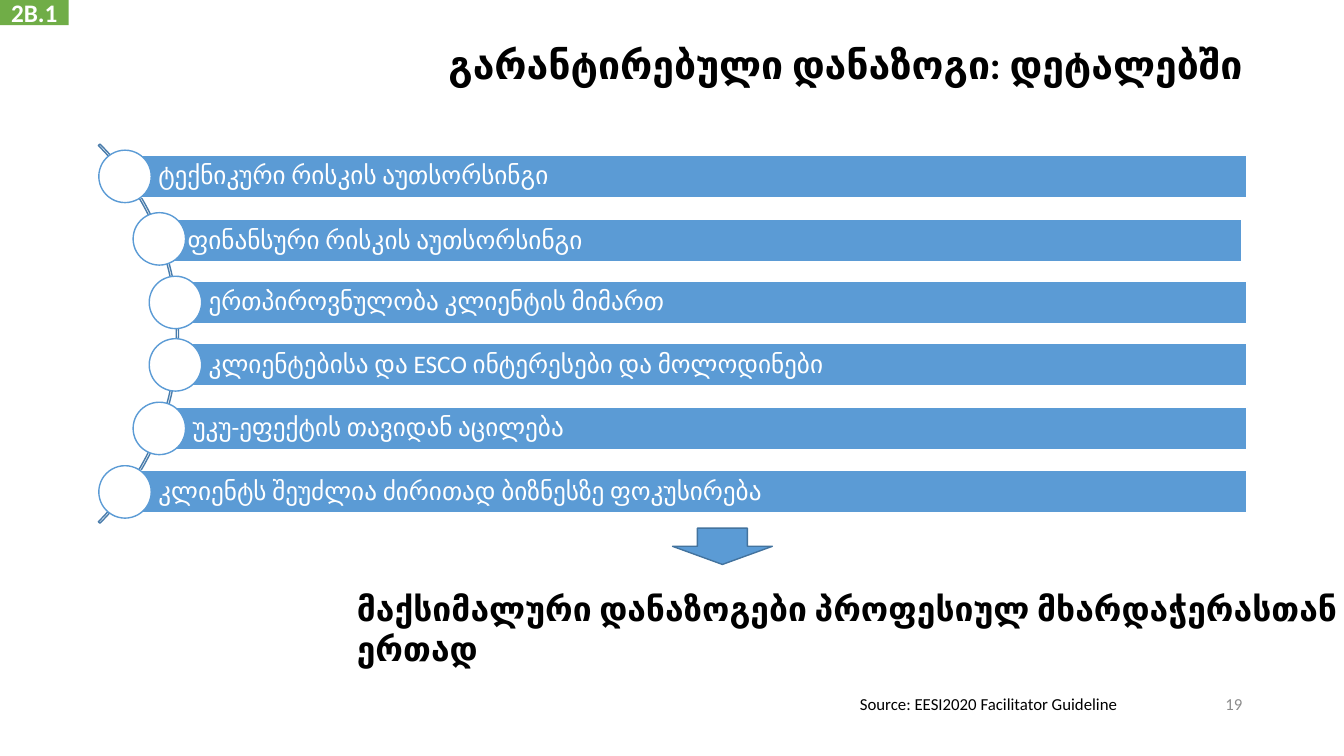
from pptx import Presentation
from pptx.dml.color import RGBColor
from pptx.enum.shapes import MSO_SHAPE
from pptx.enum.text import MSO_ANCHOR, PP_ALIGN
from pptx.util import Pt

RECT, OVAL = MSO_SHAPE.RECTANGLE, MSO_SHAPE.OVAL
ARC, DOWN_ARROW = MSO_SHAPE.BLOCK_ARC, MSO_SHAPE.DOWN_ARROW
TOP, MIDDLE = MSO_ANCHOR.TOP, MSO_ANCHOR.MIDDLE
LEFT, CENTER, RIGHT = PP_ALIGN.LEFT, PP_ALIGN.CENTER, PP_ALIGN.RIGHT

EMU_PER_PX = 9144
SLIDE_WIDTH, SLIDE_HEIGHT = 1333, 750
FONT = "Calibri"
BLUE, DARK_BLUE, ARC_BLUE = "5B9BD5", "43739E", "497CAB"
GREEN, WHITE, BLACK, GRAY = "70AD47", "FFFFFF", "000000", "8C8C8C"

BENEFITS = [
    "ტექნიკური რისკის აუთსორსინგი",
    "ფინანსური რისკის აუთსორსინგი",
    "ერთპიროვნულობა კლიენტის მიმართ",
    "კლიენტებისა და ESCO ინტერესები და მოლოდინები",
    "უკუ-ეფექტის თავიდან აცილება",
    "კლიენტს შეუძლია ძირითად ბიზნესზე ფოკუსირება",
]
CURVE_INDENTS = [0, 34, 50, 50, 34, 0]
BAR_NUDGES = {1: (-5, 2)}


def px(length):
    return length * EMU_PER_PX


def color(hex_code):
    return RGBColor.from_string(hex_code)


def add_figure(shapes, kind, box, fill=None, line=None):
    figure = shapes.add_shape(kind, *map(px, box))
    figure.shadow.inherit = False
    if fill:
        figure.fill.solid()
        figure.fill.fore_color.rgb = color(fill)
    else:
        figure.fill.background()
    if line:
        figure.line.color.rgb = color(line)
        figure.line.width = Pt(1)
    else:
        figure.line.fill.background()
    return figure


def write(holder, text, size=18, ink=BLACK, bold=False, align=LEFT,
          anchor=TOP, insets=(10, 5, 10, 5), spacing=1.0, wrap=True):
    frame = holder.text_frame
    frame.word_wrap = wrap
    frame.vertical_anchor = anchor
    (frame.margin_left, frame.margin_top,
     frame.margin_right, frame.margin_bottom) = map(px, insets)
    paragraph = frame.paragraphs[0]
    paragraph.alignment = align
    paragraph.line_spacing = spacing
    run = paragraph.add_run()
    run.text = text
    run.font.name = FONT
    run.font.size = Pt(size)
    run.font.bold = bold
    run.font.color.rgb = color(ink)


def add_text(shapes, box, text, **style):
    write(shapes.add_textbox(*map(px, box)), text, **style)


def add_header(shapes, box):
    left, top, width, height = box
    add_text(shapes, (left + 92, top + 40, width - 183, height - 40),
             "გარანტირებული დანაზოგი: დეტალებში",
             size=28, bold=True, align=RIGHT, spacing=0.9)
    section = add_figure(shapes, RECT, (left, top, 68, 25), fill=GREEN)
    write(section, "2B.1", ink=WHITE, bold=True, align=CENTER,
          anchor=MIDDLE, insets=(0, 0, 0, 0), wrap=False)


def add_benefits(shapes, box):
    left, top, width, height = box
    benefits = shapes.add_group_shape().shapes
    circle, bar_height, arc_size = 52, 42, 532
    pitch = (height - circle) / (len(BENEFITS) - 1)

    arc = add_figure(benefits, ARC,
                     (left + 79 - arc_size, top + (height - arc_size) // 2,
                      arc_size, arc_size), line=ARC_BLUE)
    arc.adjustments[0] = 189
    arc.adjustments[1] = 27
    arc.adjustments[2] = 0.004

    for row, (benefit, indent) in enumerate(zip(BENEFITS, CURVE_INDENTS)):
        circle_left, circle_top = left + indent, top + int(row * pitch)
        shift_x, shift_y = BAR_NUDGES.get(row, (0, 0))
        bar_left = circle_left + circle // 2
        bar = add_figure(benefits, RECT,
                         (bar_left + shift_x, circle_top + 5 + shift_y,
                          left + width - bar_left, bar_height),
                         fill=BLUE, line=WHITE)
        write(bar, benefit, ink=WHITE, anchor=MIDDLE,
              insets=(33, 5, 5, 5), spacing=0.9)
        add_figure(benefits, OVAL, (circle_left, circle_top, circle, circle),
                   fill=WHITE, line=BLUE)


def add_conclusion(shapes, box):
    left, top, width, height = box
    add_figure(shapes, DOWN_ARROW, (left + 323, top, 99, 36),
               fill=BLUE, line=DARK_BLUE)
    add_text(shapes, (left, top + 54, width, height - 54),
             "მაქსიმალური დანაზოგები პროფესიულ მხარდაჭერასთან ერთად",
             size=24, bold=True, insets=(10, 5, 0, 5))


def add_footer(shapes, box):
    left, top, width, height = box
    add_text(shapes, (left, top + 5, 292, 30),
             "Source: EESI2020 Facilitator Guideline", size=12, wrap=False)
    add_text(shapes, (left + width - 300, top, 300, height), "19",
             size=12, ink=GRAY, align=RIGHT, anchor=MIDDLE)


def main():
    deck = Presentation()
    deck.slide_width, deck.slide_height = px(SLIDE_WIDTH), px(SLIDE_HEIGHT)
    shapes = deck.slides.add_slide(deck.slide_layouts[6]).shapes
    add_header(shapes, (0, 0, SLIDE_WIDTH, 97))
    add_benefits(shapes, (98, 149, 1139, 365))
    add_conclusion(shapes, (344, 524, 989, 144))
    add_footer(shapes, (843, 678, 399, 40))
    deck.save("out.pptx")


if __name__ == "__main__":
    main()
